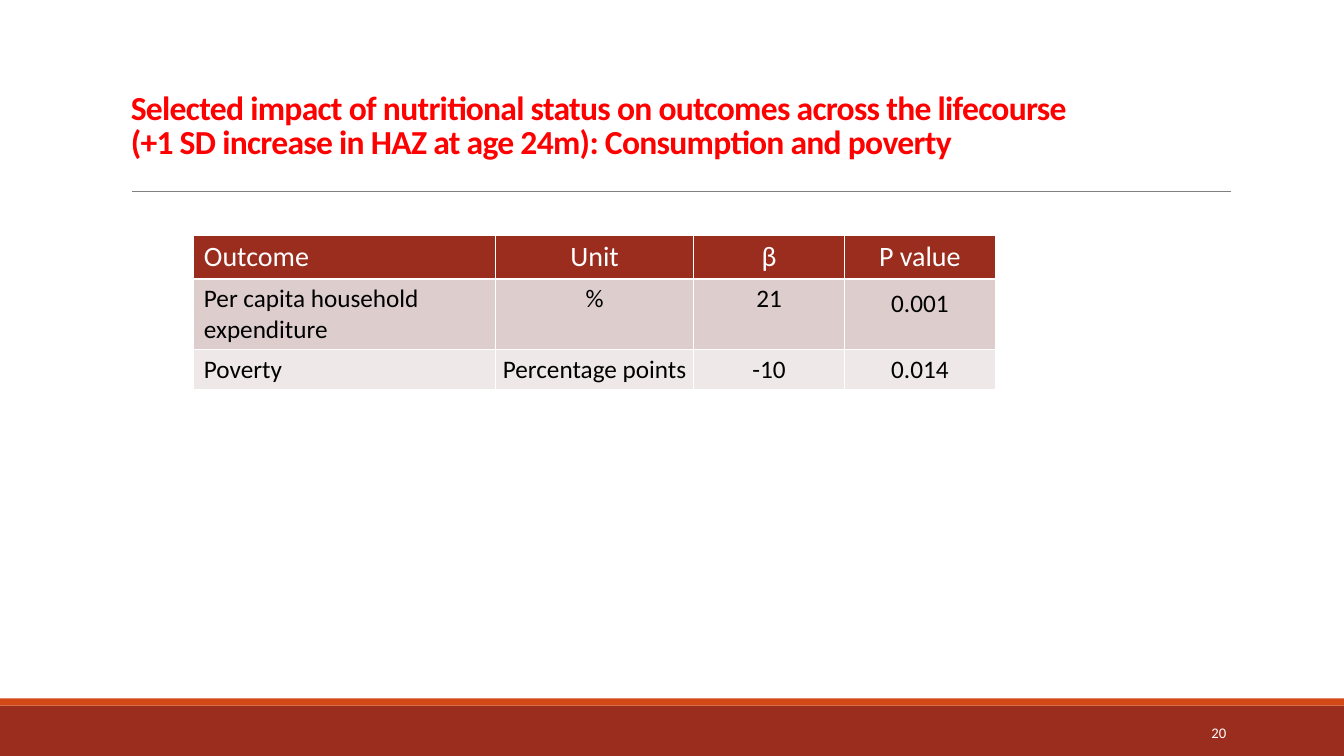
from lxml.etree import SubElement
from pptx import Presentation
from pptx.dml.color import RGBColor
from pptx.enum.shapes import MSO_CONNECTOR, MSO_SHAPE
from pptx.enum.text import MSO_ANCHOR, PP_ALIGN
from pptx.oxml.ns import qn
from pptx.util import Pt

WHITE = RGBColor(0xFF, 0xFF, 0xFF)
BLACK = RGBColor(0, 0, 0)
RED = RGBColor(0xFF, 0, 0)
GREY = RGBColor(0x80, 0x80, 0x80)
BRICK = RGBColor(0x9B, 0x2D, 0x1F)
ORANGE = RGBColor(0xD3, 0x48, 0x17)
ROSE = RGBColor(0xDE, 0xCD, 0xCD)
PALE_ROSE = RGBColor(0xEF, 0xE8, 0xE8)

FONT = "Calibri"
TITLE_LINES = [
    "Selected impact of nutritional status on outcomes across the lifecourse",
    "(+1 SD increase in HAZ at age 24m): Consumption and poverty",
]
OUTCOMES = [
    ["Outcome", "Unit", "β", "P value"],
    ["Per capita household expenditure", "%", "21", "0.001"],
    ["Poverty", "Percentage points", "-10", "0.014"],
]
COLUMN_WIDTHS = [215.5, 141.5, 107.75, 107.75]
ROW_FILLS = [BRICK, ROSE, PALE_ROSE]
LOOSE_CELLS = {(1, 2), (1, 3), (2, 1), (2, 2)}
FLUSH_CELLS = {(1, 2), (2, 1), (2, 2)}


def add_span(para, text, size, color, bold=False):
    span = para.add_run()
    span.text = text
    span.font.name = FONT
    span.font.size = Pt(size)
    span.font.bold = bold
    span.font.color.rgb = color
    return span


def add_band(page, top, height, color):
    band = page.shapes.add_shape(MSO_SHAPE.RECTANGLE, 0, Pt(top), Pt(960), Pt(height))
    band.shadow.inherit = False
    band.fill.solid()
    band.fill.fore_color.rgb = color
    band.line.fill.background()


def add_rule(page, left, right, top):
    rule = page.shapes.add_connector(
        MSO_CONNECTOR.STRAIGHT, Pt(left), Pt(top), Pt(right), Pt(top))
    rule.line.color.rgb = GREY
    rule.line.width = Pt(0.5)
    SubElement(rule.element.spPr, qn("a:effectLst"))


def add_text_box(page, left, top, width, height, anchor):
    box = page.shapes.add_textbox(Pt(left), Pt(top), Pt(width), Pt(height))
    box.text_frame.word_wrap = True
    box.text_frame.vertical_anchor = anchor
    return box.text_frame.paragraphs[0]


def add_title(page):
    para = add_text_box(page, 86.4, 22.3, 792, 96.5, MSO_ANCHOR.BOTTOM)
    para.line_spacing = 0.85
    for index, line in enumerate(TITLE_LINES):
        if index:
            para.add_line_break()
        span = add_span(para, line, 24, RED, bold=True)
        span.font._element.set("spc", "-50")


def add_page_number(page, number):
    para = add_text_box(page, 780, 508.5, 103, 29, MSO_ANCHOR.MIDDLE)
    para.alignment = PP_ALIGN.RIGHT
    add_span(para, number, 10.5, WHITE)


def set_borders(cell):
    properties = cell._tc.get_or_add_tcPr()
    for side in ("lnL", "lnR", "lnT", "lnB"):
        border = SubElement(properties, qn(f"a:{side}"), w=str(Pt(1)))
        fill = SubElement(border, qn("a:solidFill"))
        SubElement(fill, qn("a:srgbClr"), val=str(WHITE))


def fill_cell(cell, row, column, text):
    set_borders(cell)
    cell.fill.solid()
    cell.fill.fore_color.rgb = ROW_FILLS[row]
    if (row, column) in FLUSH_CELLS:
        cell.margin_left = cell.margin_right = Pt(3.6)
        cell.margin_top = cell.margin_bottom = 0
    para = cell.text_frame.paragraphs[0]
    if column:
        para.alignment = PP_ALIGN.CENTER
    if (row, column) in LOOSE_CELLS:
        para.line_spacing = 1.15
    size, color = (18, BLACK) if row else (20, WHITE)
    add_span(para, text, size, color)


def add_outcome_table(page):
    frame = page.shapes.add_table(
        len(OUTCOMES), len(COLUMN_WIDTHS), Pt(138.5), Pt(168),
        Pt(sum(COLUMN_WIDTHS)), Pt(28.8 * len(OUTCOMES)))
    table = frame.table
    for column, width in zip(table.columns, COLUMN_WIDTHS):
        column.width = Pt(width)
    for row, texts in enumerate(OUTCOMES):
        for column, text in enumerate(texts):
            fill_cell(table.cell(row, column), row, column, text)


def main():
    deck = Presentation()
    deck.slide_width = Pt(960)
    deck.slide_height = Pt(540)
    page = deck.slides.add_slide(deck.slide_layouts[6])
    add_band(page, 504, 36, BRICK)
    add_band(page, 498.8, 5.2, ORANGE)
    add_rule(page, 94.2, 879, 136.7)
    add_title(page)
    add_page_number(page, "20")
    add_outcome_table(page)
    deck.save("out.pptx")


if __name__ == "__main__":
    main()
